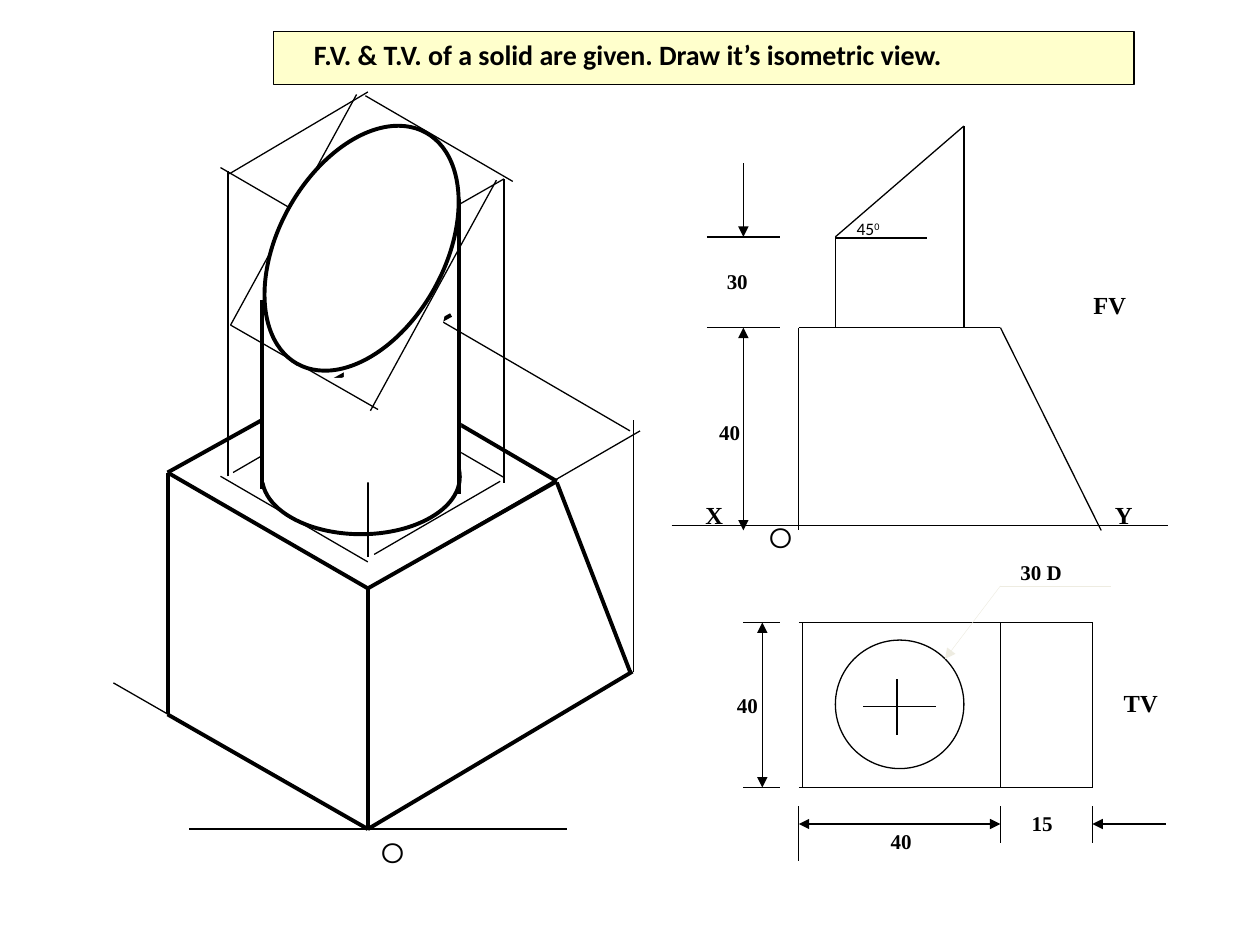
import dataclasses

import pptx
import pptx.dml.color
import pptx.enum.shapes
import pptx.enum.text
import pptx.oxml.ns
import pptx.util
from lxml import etree

COLUMNS, ROWS = 100, 75
CELL = pptx.util.Inches(10) // COLUMNS
THIN, BOLD, HAIR = 0.75, 2.25, 0.25
BLACK, WHITE, PALE, CREAM = "000000", "FFFFFF", "EEECE1", "FFFFCC"
SHAPES = pptx.enum.shapes.MSO_SHAPE
ALIGN = pptx.enum.text.PP_ALIGN
FIT = pptx.enum.text.MSO_AUTO_SIZE


def color(value):
    return pptx.dml.color.RGBColor.from_string(value)


def cells(*counts):
    return [round(count * CELL) for count in counts]


def add_child(parent, tag, **attributes):
    return etree.SubElement(parent, pptx.oxml.ns.qn(tag), **attributes)


def add_span(para, text, font="Times New Roman", size=12, bold=True, baseline=None):
    span = para.add_run()
    span.text = text
    span.font.name = font
    span.font.size = pptx.util.Pt(size)
    span.font.bold = bold
    span.font.color.rgb = color(BLACK)
    if baseline:
        span.font._element.set("baseline", str(baseline * 1000))


@dataclasses.dataclass
class Region:
    """A box on the slide; its parts are placed in cells from its top left corner."""
    page: object
    left: float
    top: float

    def line(self, x1, y1, x2, y2, width=THIN, stroke=BLACK, head=False, tail=False):
        ends = cells(self.left + x1, self.top + y1, self.left + x2, self.top + y2)
        link = self.page.shapes.add_connector(
            pptx.enum.shapes.MSO_CONNECTOR.STRAIGHT, *ends)
        link.line.color.rgb = color(stroke)
        link.line.width = pptx.util.Pt(width)
        add_child(link._element.spPr, "a:effectLst")
        outline = link.line._get_or_add_ln()
        for tag, wanted in (("a:headEnd", head), ("a:tailEnd", tail)):
            if wanted:
                add_child(outline, tag, type="triangle")

    def lines(self, *ends, width=THIN):
        for points in ends:
            self.line(*points, width=width)

    def shape(self, kind, x, y, width, height, stroke=None, turn=0):
        place = cells(self.left + x, self.top + y, width, height)
        shape = self.page.shapes.add_shape(kind, *place)
        shape.shadow.inherit = False
        shape.rotation = turn
        shape.fill.solid()
        shape.fill.fore_color.rgb = color(WHITE)
        if stroke:
            shape.line.color.rgb = color(BLACK)
            shape.line.width = pptx.util.Pt(stroke)
        else:
            shape.line.fill.background()

    def label(self, text, x, y, width=3.7, height=3, align=ALIGN.LEFT, **style):
        place = cells(self.left + x, self.top + y, width, height)
        frame = self.page.shapes.add_textbox(*place).text_frame
        frame.word_wrap = False
        frame.auto_size = FIT.SHAPE_TO_FIT_TEXT
        para = frame.paragraphs[0]
        para.alignment = align
        add_span(para, text, **style)
        return para

    def origin_mark(self, x, y):
        self.label("O", x, y, 3.9, 3.7, ALIGN.CENTER,
                   font="Montserrat", size=16, bold=False)


def draw_title(page, left, top, width, height):
    title = page.shapes.title
    title.left, title.top, title.width, title.height = cells(left, top, width, height)
    title.fill.solid()
    title.fill.fore_color.rgb = color(CREAM)
    title.line.color.rgb = color(BLACK)
    title.line.width = pptx.util.Pt(THIN)
    frame = title.text_frame
    frame.word_wrap = True
    frame.auto_size = FIT.NONE
    frame.vertical_anchor = pptx.enum.text.MSO_ANCHOR.TOP
    frame.margin_left, frame.margin_top = cells(3.2, 0.5)
    para = frame.paragraphs[0]
    para.alignment = ALIGN.LEFT
    add_span(para, "F.V. & T.V. of a solid are given. Draw it’s isometric view.",
             font="Calibri", size=16)


def draw_isometric(view):
    """Draws back to front: the white faces hide the guides behind them."""
    corner, left, ground, rim = 20.2, 4.3, 58.8, 39.7
    # Block
    view.lines((6, ground, 36, ground), (corner, ground, 0, 47.2),
               (41.3, 46.3, 41.3, 26.3), (41, 27.2, 25.2, 18),
               (corner, rim, 41.8, 27.2))
    view.lines((corner, ground, 41.2, 46.3), (corner, ground, corner, rim),
               (left, 49.7, left, 30.5), (35.2, 31.3, 41, 46.3),
               (left, 30.5, 26.8, 18), (corner, rim, left, 30.5),
               (35.2, 31.2, 19.5, 22), (left, 49.7, corner, ground), width=BOLD)
    # Foot of the cylinder and its guide box
    view.shape(SHAPES.OVAL, 11.8, 26.3, 15.7, 9.1, stroke=BOLD)
    view.lines((9.5, 30.5, 19.5, 24.7), (20.7, 37, 30.7, 31.2),
               (corner, 37.6, 8.5, 30.8), (31, 30.9, 19.3, 24.1),
               (9.1, 30.8, 9.1, 6.6), (corner, 37.2, corner, 13),
               (31, 31.3, 31, 7.2))
    view.line(corner, rim, 35.2, 31.2, width=BOLD)
    view.lines((corner, 13.1, 8.5, 6.3), (31.7, 7.4, 20, 0.6),
               (20.3, 13.3, 31, 7.2), (9.2, 6.8, corner, 0.3),
               (19.3, 0.5, 9.3, 18.8))
    # Cylinder with its slanted cut
    view.shape(SHAPES.RECTANGLE, 11.8, 23, 15.8, 8.3)
    view.shape(SHAPES.OVAL, 17, 17.3, 10.6, 5.5, turn=310.2)
    view.lines((9.3, 18.8, 21, 25.5), (30.4, 7.3, 20.4, 25.6))
    view.shape(SHAPES.OVAL, 9.2, 6.1, 21, 13.2, stroke=BOLD, turn=299.1)
    view.lines((11.8, 16.8, 11.8, 31.8), (27.4, 8.8, 27.4, 32.2), width=BOLD)
    view.origin_mark(corner, ground)


def draw_front_view(view):
    left, right, foot = 10.4, 26.4, 34.4
    near, far = 13.3, 23.5
    cut, deck_level, ground, end = 8.8, 16, 31.7, 32.1
    view.lines((left, deck_level, left, end), (left, deck_level, right, deck_level),
               (right, deck_level, foot, end), (left, ground, 35.2, ground),
               (near, cut, near, deck_level), (far, 0, far, deck_level),
               (far, 0, near, cut), (near, 8.9, 20.6, 8.9),
               (0.3, ground, 39.7, ground))
    for level in (cut, deck_level):
        view.line(3.1, level, 8.9, level)
    view.line(6, deck_level, 6, end, head=True, tail=True)
    view.line(6, cut, 6, 2.9, head=True)
    angle = view.label("45", 14, 6.8, 4.1, 2.7, font="Calibri", size=10, bold=False)
    add_span(angle, "0", font="Calibri", size=10, bold=False, baseline=30)
    for text, x, y in (("X", 2, 29.2), ("Y", 34.5, 29.2), ("FV", 32.8, 12.5)):
        view.label(text, x, y, 2.2 + 1.2 * len(text), 3.4, size=14)
    view.label("30", 3.7, 10.8)
    view.label("40", 3.1, 22.8)
    view.origin_mark(7, 30.8)


def draw_top_view(view):
    left, middle, right = 10.4, 26.4, 33.7
    back, front, scale_row = 5.4, 18.5, 21.4
    for level in (back, front):
        view.line(left, level, right, level)
        view.line(6, level, 8.9, level)
    for x in (10.7, middle, right):
        view.line(x, back, x, front)
    view.shape(SHAPES.OVAL, 13.3, 6.8, 10.2, 10.2, stroke=THIN)
    view.lines((15.5, 12.1, 21.3, 12.1), (18.2, 9.9, 18.2, 14.3))
    for x, end in ((left, 24.3), (middle, 22.9), (right, 22.9)):
        view.line(x, 20, x, end)
    view.line(left, scale_row, middle, scale_row, head=True, tail=True)
    view.line(7.5, back, 7.5, front, head=True, tail=True)
    view.line(right, scale_row, 39.5, scale_row, head=True)
    view.line(22, 8.3, middle, 2.5, width=HAIR, stroke=PALE, head=True)
    view.line(middle, 2.5, 35.2, 2.5, width=HAIR, stroke=PALE)
    view.label("TV", 35.2, 10.1, 4.7, 3.4, size=14)
    view.label("30 D", 27, -0.1, 5.3)
    for text, x, y in (("40", 4.5, 10.5), ("40", 16.7, 21.3), ("15", 27.9, 19.8)):
        view.label(text, x, y)


def main():
    deck = pptx.Presentation()
    deck.slide_width, deck.slide_height = cells(COLUMNS, ROWS)
    page = deck.slides.add_slide(deck.slide_layouts.get_by_name("Title Only"))
    draw_title(page, 21.7, 2.5, 68.3, 4.2)
    draw_isometric(Region(page, 9, 7))
    draw_front_view(Region(page, 53, 10))
    draw_top_view(Region(page, 53, 44))
    deck.save("out.pptx")


if __name__ == "__main__":
    main()
